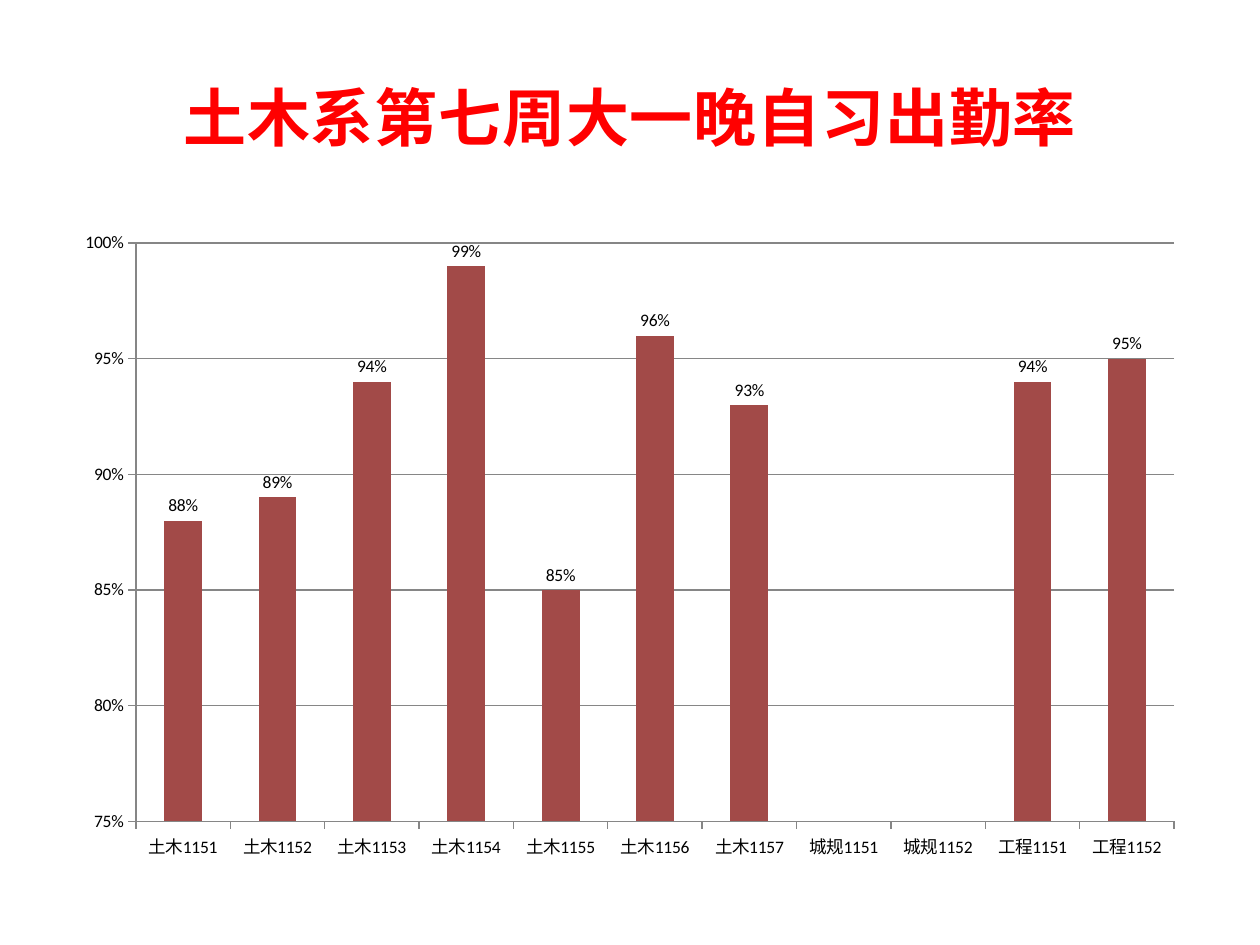
"""Build a slide charting evening self-study attendance by class."""
from dataclasses import dataclass
from typing import Optional

from lxml import etree
from pptx import Presentation
from pptx import util as u
from pptx.chart.data import CategoryChartData
from pptx.dml.color import RGBColor
from pptx.enum import chart as charts, text
from pptx.oxml import ns

RED = RGBColor(0xFF, 0x00, 0x00)
BRICK = RGBColor(0xA2, 0x4A, 0x48)
GREY = RGBColor(0x86, 0x86, 0x86)
BLACK = RGBColor(0x00, 0x00, 0x00)
PERCENT = "0%"


@dataclass(frozen=True)
class Box:
    left: float
    top: float
    width: float
    height: float

    def lengths(self) -> tuple:
        return tuple(u.Cm(n) for n in (self.left, self.top, self.width, self.height))


@dataclass(frozen=True)
class Attendance:
    group: str
    rate: Optional[float]


TITLE_BOX = Box(1.27, 0.76, 22.86, 3.18)
CHART_BOX = Box(1.27, 4.45, 22.86, 13.13)
PLOT_BOX = Box(2.74, 4.9, 20.93, 11.66)
RATES = {
    "土木": (0.88, 0.89, 0.94, 0.99, 0.85, 0.96, 0.93),
    "城规": (None, None),
    "工程": (0.94, 0.95),
}
CLASSES = [
    Attendance(f"{major}{number}", rate)
    for major, rates in RATES.items()
    for number, rate in enumerate(rates, 1151)
]


def write_title(page, words: str) -> None:
    title = page.shapes.title
    title.left, title.top, title.width, title.height = TITLE_BOX.lengths()
    title.text_frame.vertical_anchor = text.MSO_ANCHOR.MIDDLE
    para = title.text_frame.paragraphs[0]
    para.alignment = text.PP_ALIGN.CENTER
    span = para.add_run()
    span.text = words
    span.font.name = "Cambria"
    span.font.size = u.Pt(36)
    span.font.bold = True
    span.font.color.rgb = RED
    span.font._element.set("spc", "50")


def place_plot(chart) -> None:
    area = chart.element.find(".//" + ns.qn("c:plotArea"))
    for old in area.findall(ns.qn("c:layout")):
        area.remove(old)
    layout = etree.Element(ns.qn("c:layout"))
    manual = etree.SubElement(layout, ns.qn("c:manualLayout"))
    settings = {
        "layoutTarget": "inner",
        "xMode": "edge",
        "yMode": "edge",
        "x": (PLOT_BOX.left - CHART_BOX.left) / CHART_BOX.width,
        "y": (PLOT_BOX.top - CHART_BOX.top) / CHART_BOX.height,
        "w": PLOT_BOX.width / CHART_BOX.width,
        "h": PLOT_BOX.height / CHART_BOX.height,
    }
    for name, value in settings.items():
        etree.SubElement(manual, ns.qn(f"c:{name}")).set("val", str(value))
    area.insert(0, layout)


def style_line(line) -> None:
    line.color.rgb = GREY
    line.width = u.Pt(0.75)


def style_axes(chart) -> None:
    for axis in (chart.category_axis, chart.value_axis):
        axis.major_tick_mark = charts.XL_TICK_MARK.OUTSIDE
        axis.minor_tick_mark = charts.XL_TICK_MARK.NONE
        style_line(axis.format.line)
    scale = chart.value_axis
    scale.minimum_scale, scale.maximum_scale, scale.major_unit = 0.75, 1, 0.05
    scale.has_major_gridlines = True
    style_line(scale.major_gridlines.format.line)
    scale.tick_labels.number_format = PERCENT
    scale.tick_labels.number_format_is_linked = False


def style_bars(plot) -> None:
    plot.gap_width = 150
    plot.vary_by_categories = False
    fill = plot.series[0].format.fill
    fill.solid()
    fill.fore_color.rgb = BRICK
    plot.has_data_labels = True
    labels = plot.data_labels
    labels.show_value = True
    labels.number_format = PERCENT
    labels.number_format_is_linked = False
    labels.position = charts.XL_LABEL_POSITION.OUTSIDE_END


def draw_chart(page, classes: list[Attendance]) -> None:
    data = CategoryChartData(number_format=PERCENT)
    data.categories = [item.group for item in classes]
    data.add_series("Series 1", [item.rate for item in classes])
    kind = charts.XL_CHART_TYPE.COLUMN_CLUSTERED
    chart = page.shapes.add_chart(kind, *CHART_BOX.lengths(), data).chart
    chart.has_legend = False
    chart.has_title = False
    chart.font.name = "Calibri"
    chart.font.size = u.Pt(10)
    chart.font.color.rgb = BLACK
    style_axes(chart)
    style_bars(chart.plots[0])
    place_plot(chart)


def main() -> None:
    deck = Presentation()
    deck.slide_width, deck.slide_height = u.Cm(25.4), u.Cm(19.05)
    page = deck.slides.add_slide(deck.slide_layouts.get_by_name("Title Only"))
    write_title(page, "土木系第七周大一晚自习出勤率")
    draw_chart(page, CLASSES)
    deck.save("out.pptx")


if __name__ == "__main__":
    main()
